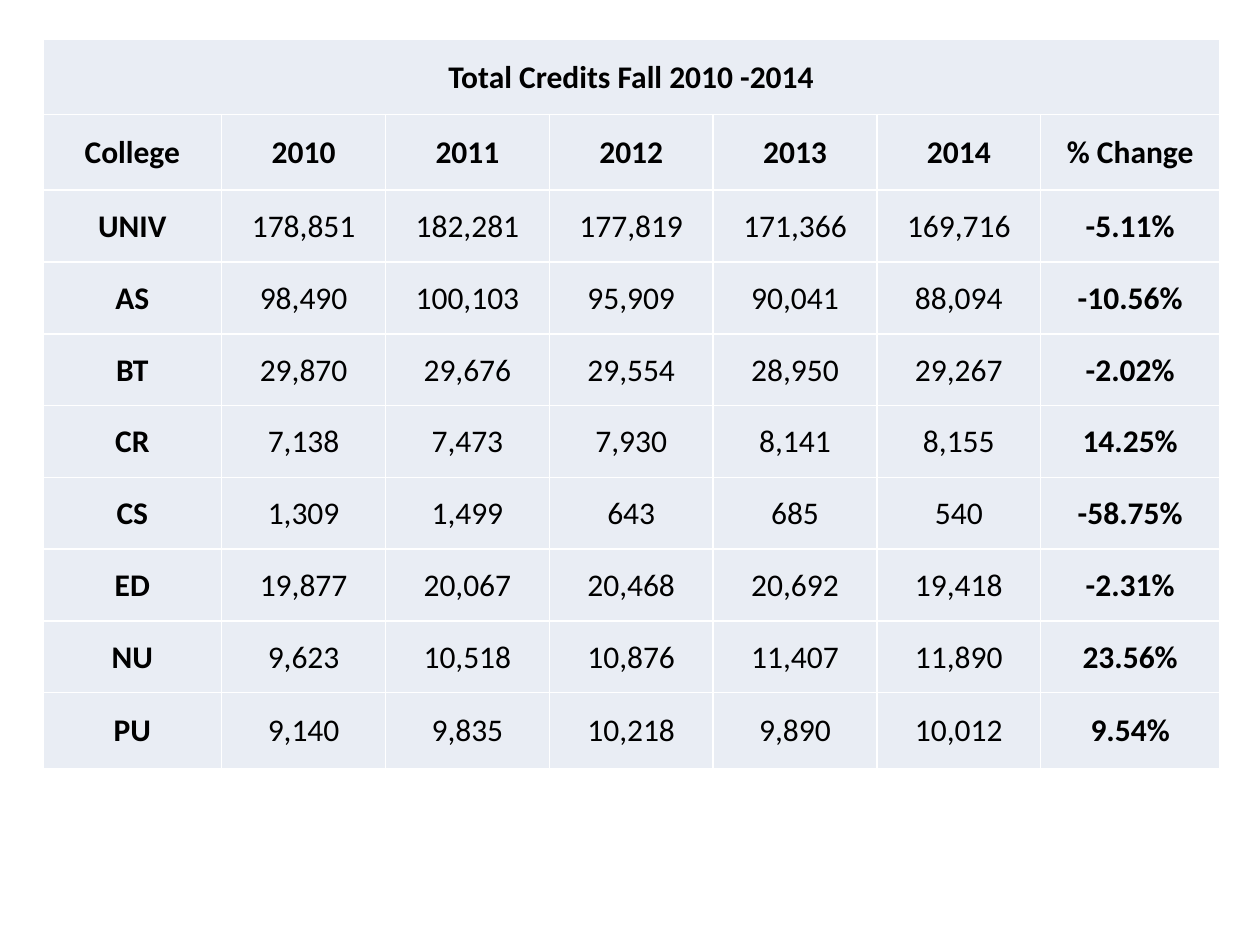
from lxml.etree import SubElement
from pptx import Presentation
from pptx.dml.color import RGBColor
from pptx.enum.text import MSO_ANCHOR, PP_ALIGN
from pptx.oxml.ns import qn
from pptx.util import Inches, Pt

COLORS = {"text": "000000", "cell": "E9EDF4", "border": "FFFFFF"}
TITLE = "Total Credits Fall 2010 -2014"
ROWS = [
    ["College", "2010", "2011", "2012", "2013", "2014", "% Change"],
    ["UNIV", "178,851", "182,281", "177,819", "171,366", "169,716", "-5.11%"],
    ["AS", "98,490", "100,103", "95,909", "90,041", "88,094", "-10.56%"],
    ["BT", "29,870", "29,676", "29,554", "28,950", "29,267", "-2.02%"],
    ["CR", "7,138", "7,473", "7,930", "8,141", "8,155", "14.25%"],
    ["CS", "1,309", "1,499", "643", "685", "540", "-58.75%"],
    ["ED", "19,877", "20,067", "20,468", "20,692", "19,418", "-2.31%"],
    ["NU", "9,623", "10,518", "10,876", "11,407", "11,890", "23.56%"],
    ["PU", "9,140", "9,835", "10,218", "9,890", "10,012", "9.54%"],
]
COLUMN_WIDTHS = [1.42] + [1.3] * 5 + [1.42]
ROW_HEIGHTS = [0.6] * 2 + [0.57] * 7 + [0.6]


def style_cell(cell):
    """Set the borders, fill, margins and anchor of a cell."""
    properties = cell._tc.get_or_add_tcPr()
    for side in ("a:lnL", "a:lnR", "a:lnT", "a:lnB"):
        line = SubElement(properties, qn(side), w=str(Pt(1)))
        line_fill = SubElement(line, qn("a:solidFill"))
        SubElement(line_fill, qn("a:srgbClr"), val=COLORS["border"])
    cell.fill.solid()
    cell.fill.fore_color.rgb = RGBColor.from_string(COLORS["cell"])
    cell.margin_left = cell.margin_right = cell.margin_top = Inches(0.01)
    cell.margin_bottom = Inches(0)
    cell.vertical_anchor = MSO_ANCHOR.MIDDLE


def write_cell(cell, text, bold):
    para = cell.text_frame.paragraphs[0]
    para.alignment = PP_ALIGN.CENTER
    span = para.add_run()
    span.text = text
    span.font.name = "Calibri"
    span.font.size = Pt(18)
    span.font.bold = bold
    span.font.color.rgb = RGBColor.from_string(COLORS["text"])


deck = Presentation()
deck.slide_width = Inches(10)
deck.slide_height = Inches(7.5)
page = deck.slides.add_slide(deck.slide_layouts[6])

frame = page.shapes.add_table(
    len(ROW_HEIGHTS), len(COLUMN_WIDTHS), Inches(0.34), Inches(0.31),
    Inches(sum(COLUMN_WIDTHS)), Inches(sum(ROW_HEIGHTS)))
table = frame.table
table.first_row = False
table.horz_banding = False
for column, width in zip(table.columns, COLUMN_WIDTHS):
    column.width = Inches(width)
for row, height in zip(table.rows, ROW_HEIGHTS):
    row.height = Inches(height)
for cell in table.iter_cells():
    style_cell(cell)

last_column = len(COLUMN_WIDTHS) - 1
table.cell(0, 0).merge(table.cell(0, last_column))
write_cell(table.cell(0, 0), TITLE, True)
for row_index, values in enumerate(ROWS, start=1):
    for column_index, value in enumerate(values):
        bold = row_index == 1 or column_index in (0, last_column)
        write_cell(table.cell(row_index, column_index), value, bold)

deck.save("out.pptx")
